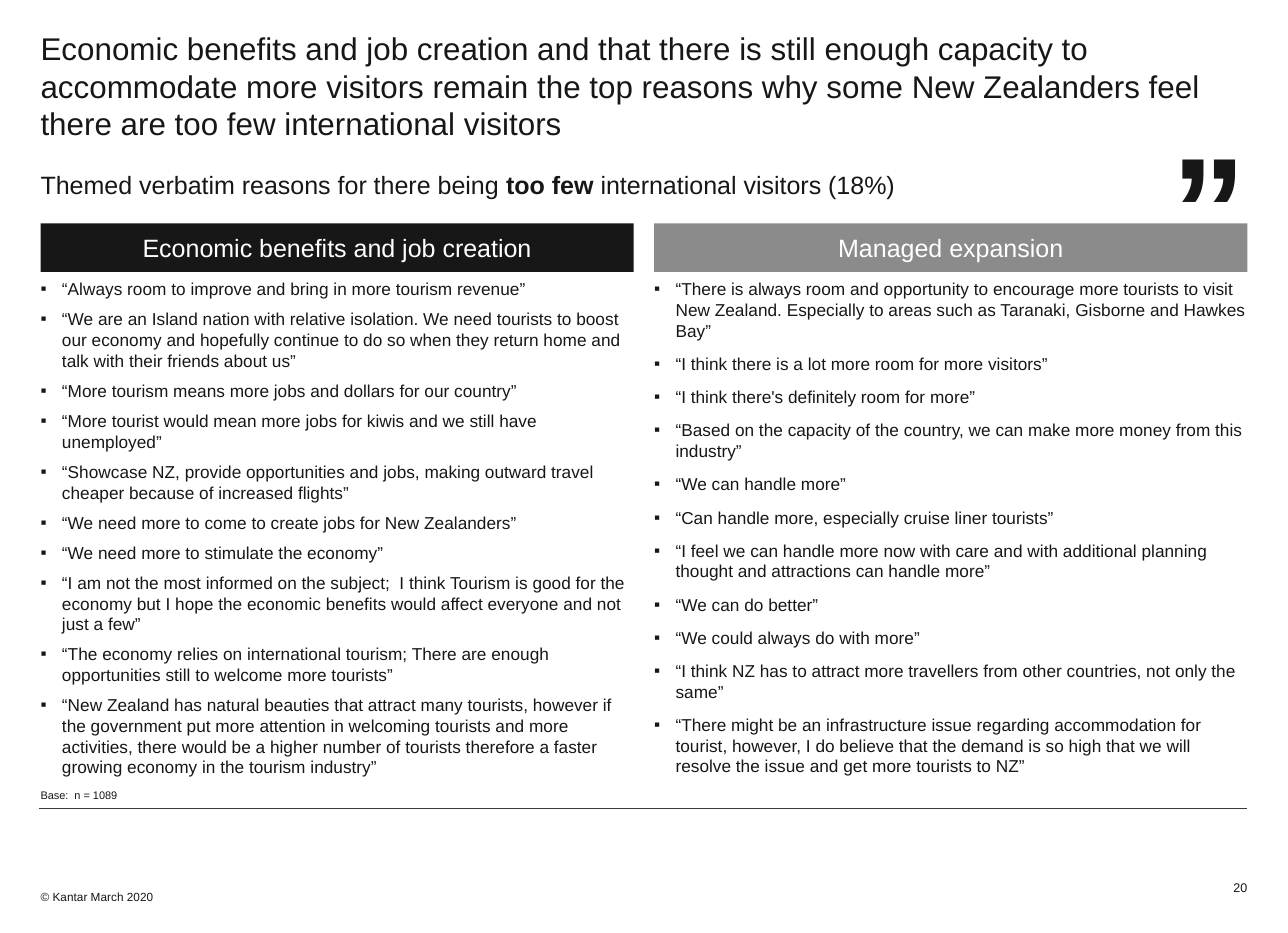
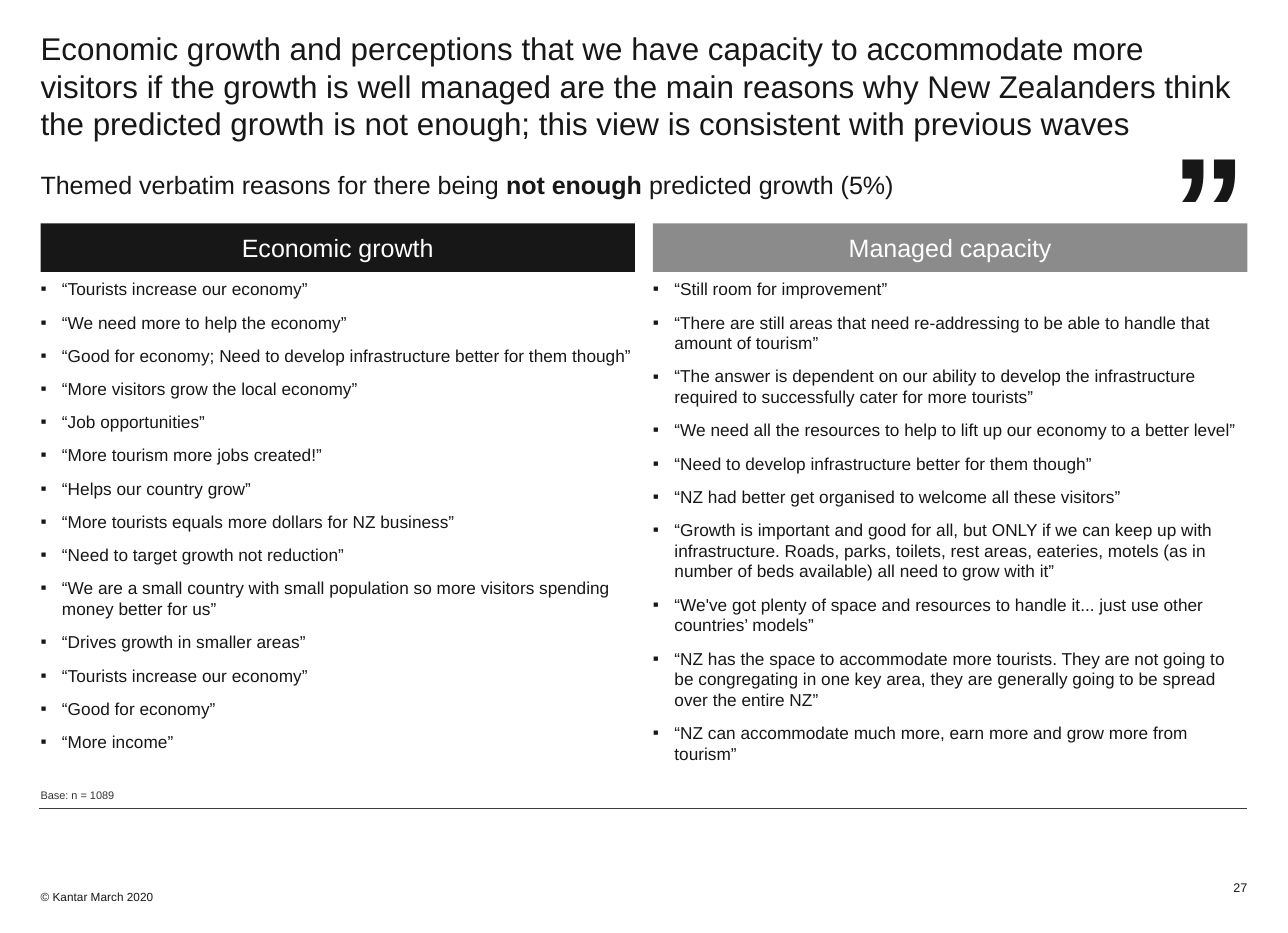
"""Build two slides of themed visitor quotes in paired columns."""
from dataclasses import dataclass

from lxml import etree
from pptx import Presentation
from pptx.dml.color import RGBColor
from pptx.enum import shapes, text
from pptx.oxml.ns import qn
from pptx.util import Inches, Pt

INK, GREY, WHITE, RULE, SOFT = "171717", "8B8B8B", "FFFFFF", "3A3A3A", "333333"
FONT = "Arial"
LEFT, RIGHT = 0.36, 11.06
WIDTH = RIGHT - LEFT
BAND_TOP, BAND_HEIGHT = 1.98, 0.43
QUOTES_TOP, QUOTES_HEIGHT = 2.47, 4.33
HANG = 0.19
ALIGN, ANCHOR = text.PP_ALIGN, text.MSO_ANCHOR


@dataclass(frozen=True)
class Span:
    """A piece of text with its weight."""
    words: str
    bold: bool = False


@dataclass(frozen=True)
class Style:
    """Character size and colour with the placing of the text."""
    size: float
    colour: str = INK
    align: ALIGN = ALIGN.LEFT
    anchor: ANCHOR = ANCHOR.TOP
    insets: tuple[float, float, float, float] = (0, 0, 0, 0)


@dataclass(frozen=True)
class Theme:
    """One column: heading, band colour, gap after each quote, quotes."""
    heading: str
    band: str
    gap: float
    quotes: tuple[str, ...]


@dataclass(frozen=True)
class Content:
    """Everything that differs between the slides."""
    title: str
    subtitle: tuple[Span, ...]
    column_width: float
    themes: tuple[Theme, Theme]
    base: str
    base_colour: str
    number: str


TITLE = Style(20, insets=(0, 0.26, 0, 0))
SUBTITLE = Style(16, insets=(0, 0.26, 0, 0))
BAND = Style(16, WHITE, ALIGN.CENTER, ANCHOR.MIDDLE, (0.11, 0.06, 0.11, 0.06))
QUOTE = Style(11)
MARK = Style(96, align=ALIGN.RIGHT)
COPYRIGHT = Style(7.5, anchor=ANCHOR.BOTTOM, insets=(0, 0, 0, 0.31))
NUMBER = Style(8, align=ALIGN.RIGHT, anchor=ANCHOR.BOTTOM)

CONTENTS = (
    Content(
        "Economic benefits and job creation and that there is still enough capacity to "
        "accommodate more visitors remain the top reasons why some New Zealanders feel "
        "there are too few international visitors",
        (Span("Themed verbatim reasons for there being "), Span("too few ", True),
         Span("international visitors (18%)")),
        5.26,
        (
            Theme("Economic benefits and job creation", INK, 6, (
                "“Always room to improve and bring in more tourism revenue”",
                "“We are an Island nation with relative isolation. We need tourists to boost "
                "our economy and hopefully continue to do so when they return home and talk "
                "with their friends about us”",
                "“More tourism means more jobs and dollars for our country”",
                "“More tourist would mean more jobs for kiwis and we still have unemployed”",
                "“Showcase NZ, provide opportunities and jobs, making outward travel cheaper "
                "because of increased flights”",
                "“We need more to come to create jobs for New Zealanders”",
                "“We need more to stimulate the economy”",
                "“I am not the most informed on the subject;  I think Tourism is good for the "
                "economy but I hope the economic benefits would affect everyone and not just "
                "a few”",
                "“The economy relies on international tourism; There are enough opportunities "
                "still to welcome more tourists”",
                "“New Zealand has natural beauties that attract many tourists, however if the "
                "government put more attention in welcoming tourists and more activities, "
                "there would be a higher number of tourists therefore a faster growing "
                "economy in the tourism industry”",
            )),
            Theme("Managed expansion", GREY, 8, (
                "“There is always room and opportunity to encourage more tourists to visit "
                "New Zealand. Especially to areas such as Taranaki, Gisborne and Hawkes Bay”",
                "“I think there is a lot more room for more visitors”",
                "“I think there's definitely room for more”",
                "“Based on the capacity of the country, we can make more money from this "
                "industry”",
                "“We can handle more”",
                "“Can handle more, especially cruise liner tourists”",
                "“I feel we can handle more now with care and with additional planning "
                "thought and attractions can handle more”",
                "“We can do better”",
                "“We could always do with more”",
                "“I think NZ has to attract more travellers from other countries, not only "
                "the same”",
                "“There might be an infrastructure issue regarding accommodation for tourist, "
                "however, I do believe that the demand is so high that we will resolve the "
                "issue and get more tourists to NZ”",
            )),
        ),
        "Base:  n = 1089", INK, "20",
    ),
    Content(
        "Economic growth and perceptions that we have capacity to accommodate more "
        "visitors if the growth is well managed are the main reasons why New Zealanders "
        "think the predicted growth is not enough; this view is consistent with previous "
        "waves",
        (Span("Themed verbatim reasons for there being "), Span("not enough ", True),
         Span("predicted growth (5%)")),
        5.27,
        (
            Theme("Economic growth", INK, 8, (
                "“Tourists increase our economy”",
                "“We need more to help the economy”",
                "“Good for economy; Need to develop infrastructure better for them though”",
                "“More visitors grow the local economy”",
                "“Job opportunities”",
                "“More tourism more jobs created!”",
                "“Helps our country grow”",
                "“More tourists equals more dollars for NZ business”",
                "“Need to target growth not reduction”",
                "“We are a small country with small population so more visitors spending "
                "money better for us”",
                "“Drives growth in smaller areas”",
                "“Tourists increase our economy”",
                "“Good for economy”",
                "“More income”",
            )),
            Theme("Managed capacity", GREY, 8, (
                "“Still room for improvement”",
                "“There are still areas that need re-addressing to be able to handle that "
                "amount of tourism”",
                "“The answer is dependent on our ability to develop the infrastructure "
                "required to successfully cater for more tourists”",
                "“We need all the resources to help to lift up our economy to a better level”",
                "“Need to develop infrastructure better for them though”",
                "“NZ had better get organised to welcome all these visitors”",
                "“Growth is important and good for all, but ONLY if we can keep up with "
                "infrastructure. Roads, parks, toilets, rest areas, eateries, motels (as in "
                "number of beds available) all need to grow with it”",
                "“We've got plenty of space and resources to handle it... just use other "
                "countries’ models”",
                "“NZ has the space to accommodate more tourists. They are not going to be "
                "congregating in one key area, they are generally going to be spread over "
                "the entire NZ”",
                "“NZ can accommodate much more, earn more and grow more from tourism”",
            )),
        ),
        "Base: n = 1089", SOFT, "27",
    ),
)


def colour(code: str) -> RGBColor:
    """Turn a hex string into a colour."""
    return RGBColor.from_string(code)


def write(shape, paragraphs: list[tuple[Span, ...]], style: Style) -> None:
    """Fill a shape with styled paragraphs."""
    frame = shape.text_frame
    frame.word_wrap = True
    frame.vertical_anchor = style.anchor
    (frame.margin_left, frame.margin_top,
     frame.margin_right, frame.margin_bottom) = map(Inches, style.insets)
    for index, spans in enumerate(paragraphs):
        para = frame.add_paragraph() if index else frame.paragraphs[0]
        para.alignment = style.align
        for span in spans:
            run = para.add_run()
            run.text = span.words
            run.font.name = FONT
            run.font.size = Pt(style.size)
            run.font.bold = span.bold
            run.font.color.rgb = colour(style.colour)


def add_text(page, left: float, top: float, width: float, height: float,
             paragraphs: list[tuple[Span, ...]], style: Style):
    """Add a text box and return it."""
    box = page.shapes.add_textbox(Inches(left), Inches(top), Inches(width), Inches(height))
    write(box, paragraphs, style)
    return box


def add_bullets(box, gap: float) -> None:
    """Give each paragraph a hanging square bullet and a gap after it."""
    for para in box.text_frame.paragraphs:
        para.space_after = Pt(gap)
        properties = para._p.get_or_add_pPr()
        properties.set("marL", str(Inches(HANG)))
        properties.set("indent", str(-Inches(HANG)))
        etree.SubElement(properties, qn("a:buFont"), typeface=FONT)
        etree.SubElement(properties, qn("a:buChar"), char="▪")


def add_theme(page, left: float, width: float, theme: Theme) -> None:
    """Draw one column: coloured band above its quotes."""
    band = page.shapes.add_shape(shapes.MSO_SHAPE.RECTANGLE, Inches(left), Inches(BAND_TOP),
                                 Inches(width), Inches(BAND_HEIGHT))
    band.shadow.inherit = False
    band.fill.solid()
    band.fill.fore_color.rgb = colour(theme.band)
    band.line.fill.background()
    write(band, [(Span(theme.heading),)], BAND)
    quotes = [(Span(quote),) for quote in theme.quotes]
    box = add_text(page, left, QUOTES_TOP, width, QUOTES_HEIGHT, quotes, QUOTE)
    add_bullets(box, theme.gap)


def add_footer(page, content: Content) -> None:
    """Draw the base note, rule, copyright line and page number."""
    base_style = Style(7, content.base_colour, anchor=ANCHOR.BOTTOM)
    add_text(page, LEFT, 6.88, 9.45, 0.23, [(Span(content.base),)], base_style)
    rule = page.shapes.add_connector(shapes.MSO_CONNECTOR.STRAIGHT, Inches(0.35), Inches(7.17),
                                     Inches(RIGHT), Inches(7.17))
    rule.line.color.rgb = colour(RULE)
    rule.line.width = Pt(0.75)
    etree.SubElement(rule._element.spPr, qn("a:effectLst"))
    add_text(page, LEFT, 7.65, 2.78, 0.58, [(Span("© Kantar March 2020"),)], COPYRIGHT)
    add_text(page, RIGHT - 0.63, 7.63, 0.63, 0.3, [(Span(content.number),)], NUMBER)


def add_page(deck, content: Content) -> None:
    """Build one slide."""
    page = deck.slides.add_slide(deck.slide_layouts[6])
    add_text(page, LEFT, 0, WIDTH, 1.24, [(Span(content.title),)], TITLE)
    add_text(page, LEFT, 1.24, WIDTH, 0.92, [content.subtitle], SUBTITLE)
    add_text(page, 10.16, 1, 0.89, 0.84, [(Span("”", True),)], MARK)
    lefts = (LEFT, RIGHT - content.column_width)
    for left, theme in zip(lefts, content.themes):
        add_theme(page, left, content.column_width, theme)
    add_footer(page, content)


def main() -> None:
    """Build and save the deck."""
    deck = Presentation()
    deck.slide_width, deck.slide_height = Inches(11.42), Inches(8.27)
    for content in CONTENTS:
        add_page(deck, content)
    deck.save("out.pptx")


if __name__ == "__main__":
    main()
